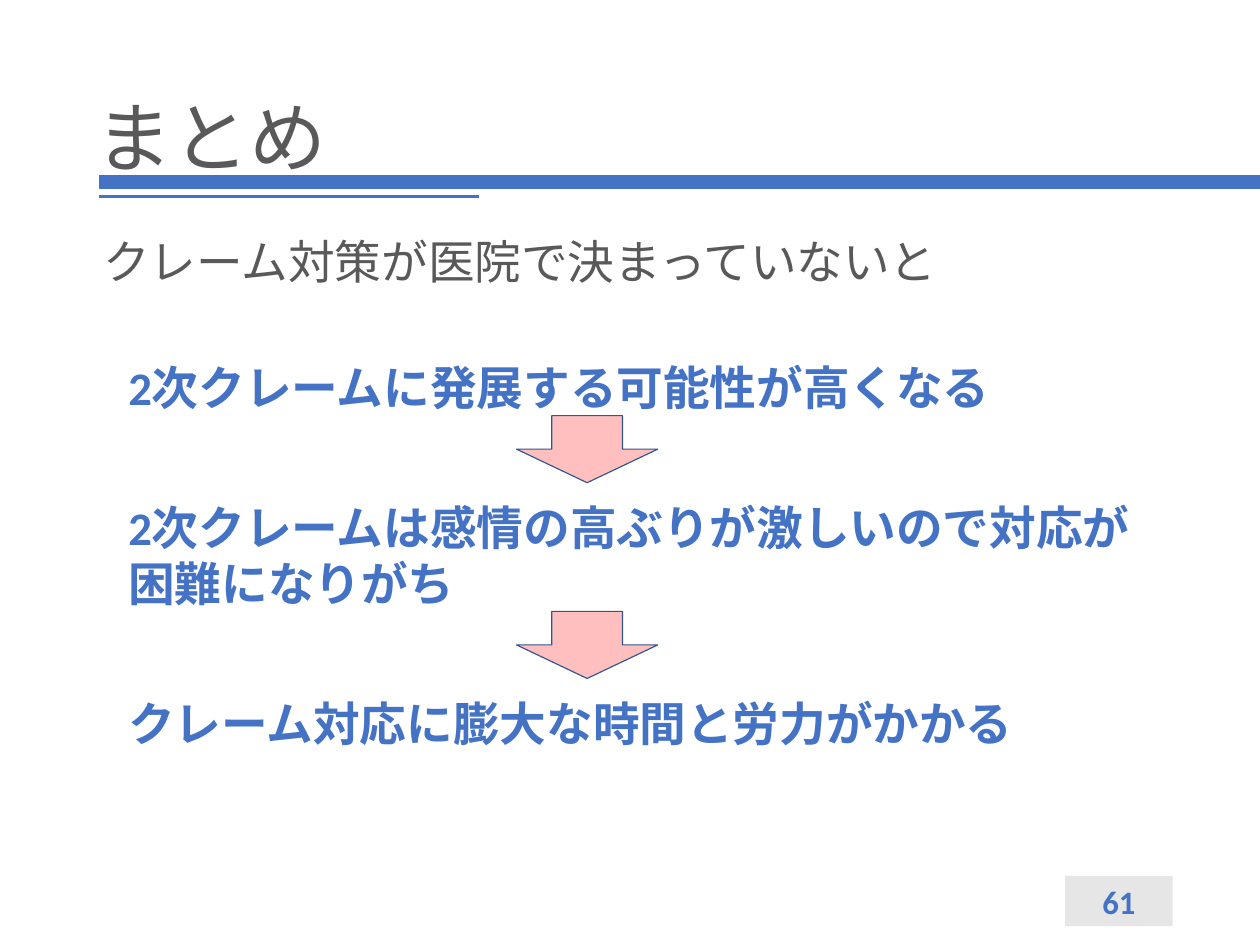
from dataclasses import dataclass

from lxml import etree
from pptx import Presentation
from pptx.dml.color import RGBColor
from pptx.enum import lang, shapes, text
from pptx.oxml import ns
from pptx.util import Cm, Pt


@dataclass(frozen=True)
class Theme:
    blue: str = "4472C4"
    grey: str = "595959"
    pale: str = "E7E6E6"
    pink: str = "FFBFBF"
    navy: str = "325491"
    font: str = "Calibri"
    gothic: str = "Noto Sans CJK JP"
    head: int = 66
    body: int = 40
    page: int = 28


THEME = Theme()


def style(para, size, color, bold=False, name=THEME.font):
    font = para.font
    font.size, font.bold, font.name = Pt(size), bold, name
    font.color.rgb = RGBColor.from_string(color)
    font.language_id = lang.MSO_LANGUAGE_ID.JAPANESE
    props = para._p.pPr.find(ns.qn("a:defRPr"))
    etree.SubElement(props, ns.qn("a:ea"), typeface=THEME.font)


def add_title(slide, words):
    title = slide.shapes.title
    title.left, title.top, title.width, title.height = Cm(2.62), Cm(1.52), Cm(32.87), Cm(5.51)
    frame = title.text_frame
    frame.text = words
    frame.auto_size = text.MSO_AUTO_SIZE.NONE
    frame.vertical_anchor = text.MSO_ANCHOR.MIDDLE
    para = frame.paragraphs[0]
    para.alignment = text.PP_ALIGN.LEFT
    para.line_spacing = 0.9
    style(para, THEME.head, THEME.grey)


def add_block(slide, kind, box, fill, line=None):
    block = slide.shapes.add_shape(kind, *map(Cm, box))
    block.shadow.inherit = False
    block.fill.solid()
    block.fill.fore_color.rgb = RGBColor.from_string(fill)
    if line:
        block.line.color.rgb = RGBColor.from_string(line)
        block.line.width = Pt(1)
    else:
        block.line.fill.background()
    return block


def add_rule(slide, left, right, top):
    rule = slide.shapes.add_connector(
        shapes.MSO_CONNECTOR.STRAIGHT, Cm(left), Cm(top), Cm(right), Cm(top))
    rule.line.color.rgb = RGBColor.from_string(THEME.blue)
    rule.line.width = Pt(2.25)
    etree.SubElement(rule._element.spPr, ns.qn("a:effectLst"))


def add_text(slide, box, lines, color, gap=0, wrap=True, **look):
    frame = slide.shapes.add_textbox(*map(Cm, box)).text_frame
    frame.word_wrap = wrap
    for index, line in enumerate(lines):
        para = frame.paragraphs[0] if index == 0 else frame.add_paragraph()
        para.text = line
        if index < len(lines) - 1:
            para.space_after = Pt(gap)
        style(para, THEME.body, color, **look)


def add_page(slide, number):
    page = add_block(slide, shapes.MSO_SHAPE.RECTANGLE, (32.21, 26.49, 3.25, 1.52), THEME.pale)
    frame = page.text_frame
    frame.text = number
    frame.vertical_anchor = text.MSO_ANCHOR.MIDDLE
    frame.paragraphs[0].alignment = text.PP_ALIGN.CENTER
    style(frame.paragraphs[0], THEME.page, THEME.blue, bold=True)


def main():
    deck = Presentation()
    deck.slide_width, deck.slide_height = Cm(38.1), Cm(28.58)
    slide = deck.slides.add_slide(deck.slide_layouts[5])

    add_block(slide, shapes.MSO_SHAPE.RECTANGLE, (3, 5.31, 35.1, 0.38), THEME.blue, THEME.blue)
    add_rule(slide, 3, 14.48, 5.94)
    add_title(slide, "まとめ")
    add_page(slide, "61")
    add_text(slide, (2.87, 6.93, 26.16, 1.96), ["クレーム対策が医院で決まっていないと"],
             THEME.grey, wrap=False, name=THEME.gothic)
    steps = [
        "2次クレームに発展する可能性が高くなる",
        "2次クレームは感情の高ぶりが激しいので対応が困難になりがち",
        "クレーム対応に膨大な時間と労力がかかる",
    ]
    add_text(slide, (3.63, 10.74, 31.85, 12.22), steps, THEME.blue, gap=72, bold=True)
    for top in (12.57, 18.49):
        add_block(slide, shapes.MSO_SHAPE.DOWN_ARROW, (15.62, top, 4.27, 2.03),
                  THEME.pink, THEME.navy)

    deck.save("out.pptx")


if __name__ == "__main__":
    main()
